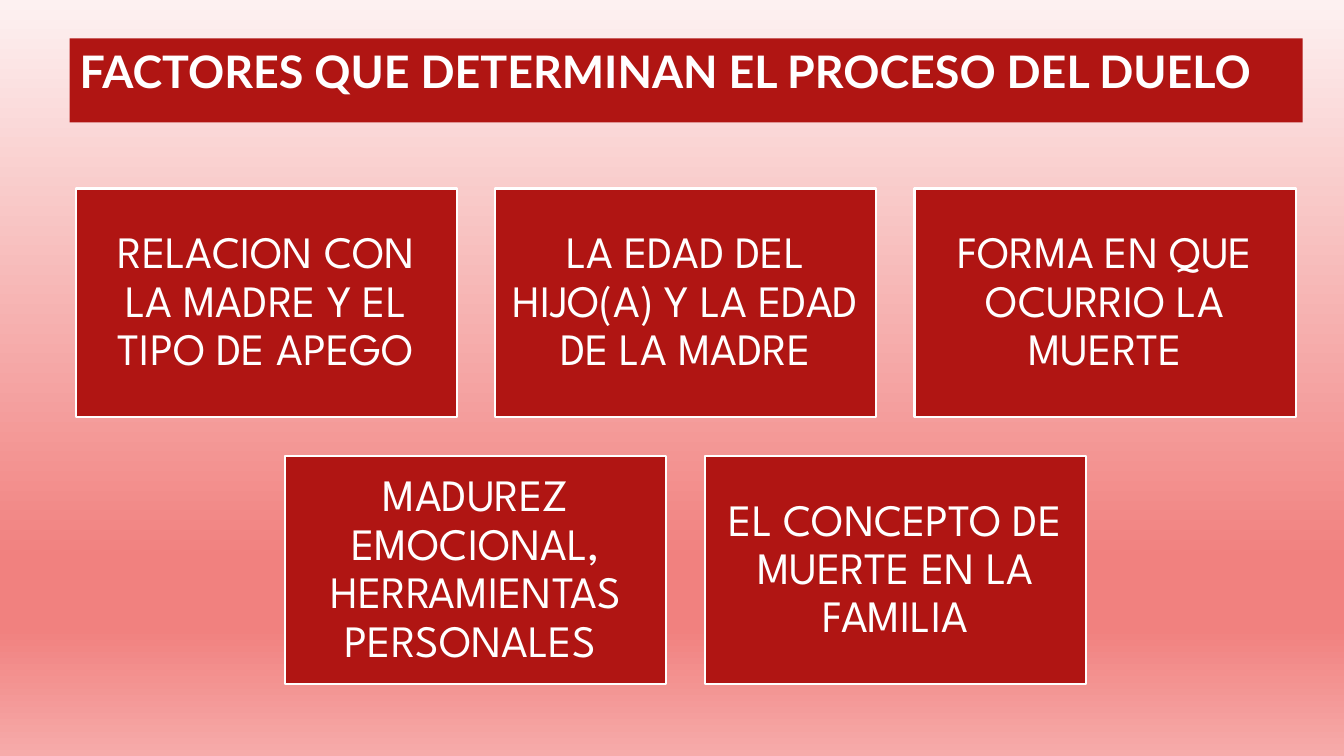
from lxml import etree
from pptx import Presentation
from pptx.dml.color import RGBColor
from pptx.enum.shapes import MSO_SHAPE
from pptx.enum.text import MSO_ANCHOR, MSO_AUTO_SIZE, PP_ALIGN
from pptx.oxml.ns import qn
from pptx.util import Inches, Pt

RECTANGLE = MSO_SHAPE.RECTANGLE
TOP, MIDDLE = MSO_ANCHOR.TOP, MSO_ANCHOR.MIDDLE
GROW = MSO_AUTO_SIZE.SHAPE_TO_FIT_TEXT
LEFT, CENTER = PP_ALIGN.LEFT, PP_ALIGN.CENTER

RED = RGBColor(0xB0, 0x15, 0x13)
WHITE = RGBColor(0xFF, 0xFF, 0xFF)
PALE_PINK = RGBColor(0xFD, 0xF1, 0xF1)
CORAL = RGBColor(0xF1, 0x81, 0x7F)
PINK = RGBColor(0xF6, 0xAB, 0xAA)
BACKGROUND_STOPS = [(0, PALE_PINK), (74, CORAL), (83, CORAL), (100, PINK)]

TITLE_ONLY = 5
CARD_WIDTH, CARD_HEIGHT = 3.78, 2.27
COLUMN_STEP, ROW_STEP = 4.16, 2.65
GRID_CENTER, GRID_TOP = 6.8, 1.87

FACTOR_ROWS = [
    [
        "RELACION CON LA MADRE Y EL TIPO DE APEGO",
        "LA EDAD DEL HIJO(A) Y LA EDAD DE LA MADRE",
        "FORMA EN QUE OCURRIO LA MUERTE",
    ],
    [
        "MADUREZ EMOCIONAL, HERRAMIENTAS PERSONALES ",
        "EL CONCEPTO DE MUERTE EN LA FAMILIA",
    ],
]


class FactorSlide:
    title_font = "Lato"
    card_font = "League Spartan"
    size = Pt(32)

    def __init__(self, deck):
        self.page = deck.slides.add_slide(deck.slide_layouts[TITLE_ONLY])

    def background(self, stops):
        fill = self.page.background.fill
        fill.gradient()
        fill.gradient_angle = 270
        stop_list = next(self.page.element.iter(qn("a:gsLst")))
        for stop in list(stop_list):
            stop_list.remove(stop)
        for percent, color in stops:
            stop = etree.SubElement(stop_list, qn("a:gs"), pos=str(percent * 1000))
            etree.SubElement(stop, qn("a:srgbClr"), val=str(color))

    def set_text(self, box, text, font, alignment, bold=False):
        box.text_frame.text = text
        paragraph = box.text_frame.paragraphs[0]
        paragraph.alignment = alignment
        paragraph.font.name = font
        paragraph.font.size = self.size
        paragraph.font.bold = bold
        paragraph.font.color.rgb = WHITE
        return paragraph

    def title(self, text, left, top, width, height):
        box = self.page.shapes.title
        box.left, box.top = Inches(left), Inches(top)
        box.width, box.height = Inches(width), Inches(height)
        box.fill.solid()
        box.fill.fore_color.rgb = RED
        frame = box.text_frame
        frame.word_wrap = True
        frame.auto_size = GROW
        frame.vertical_anchor = TOP
        self.set_text(box, text, self.title_font, LEFT, bold=True)

    def card(self, text, left, top):
        box = self.page.shapes.add_shape(
            RECTANGLE, Inches(left), Inches(top), Inches(CARD_WIDTH), Inches(CARD_HEIGHT)
        )
        box.shadow.inherit = False
        box.fill.solid()
        box.fill.fore_color.rgb = RED
        box.line.color.rgb = WHITE
        box.line.width = Pt(1.5)
        frame = box.text_frame
        frame.word_wrap = True
        frame.vertical_anchor = MIDDLE
        frame.margin_left = frame.margin_right = Inches(0.13)
        frame.margin_top = frame.margin_bottom = Inches(0.13)
        paragraph = self.set_text(box, text, self.card_font, CENTER)
        paragraph.line_spacing = 0.9

    def card_grid(self, rows):
        for row, factors in enumerate(rows):
            row_width = (len(factors) - 1) * COLUMN_STEP + CARD_WIDTH
            row_left = GRID_CENTER - row_width / 2
            for column, factor in enumerate(factors):
                self.card(factor, row_left + column * COLUMN_STEP, GRID_TOP + row * ROW_STEP)


def main():
    deck = Presentation()
    deck.slide_width, deck.slide_height = Inches(13.33), Inches(7.5)
    slide = FactorSlide(deck)
    slide.background(BACKGROUND_STOPS)
    slide.title("FACTORES QUE DETERMINAN EL PROCESO DEL DUELO", 0.69, 0.38, 12.23, 0.64)
    slide.card_grid(FACTOR_ROWS)
    deck.save("out.pptx")


if __name__ == "__main__":
    main()
